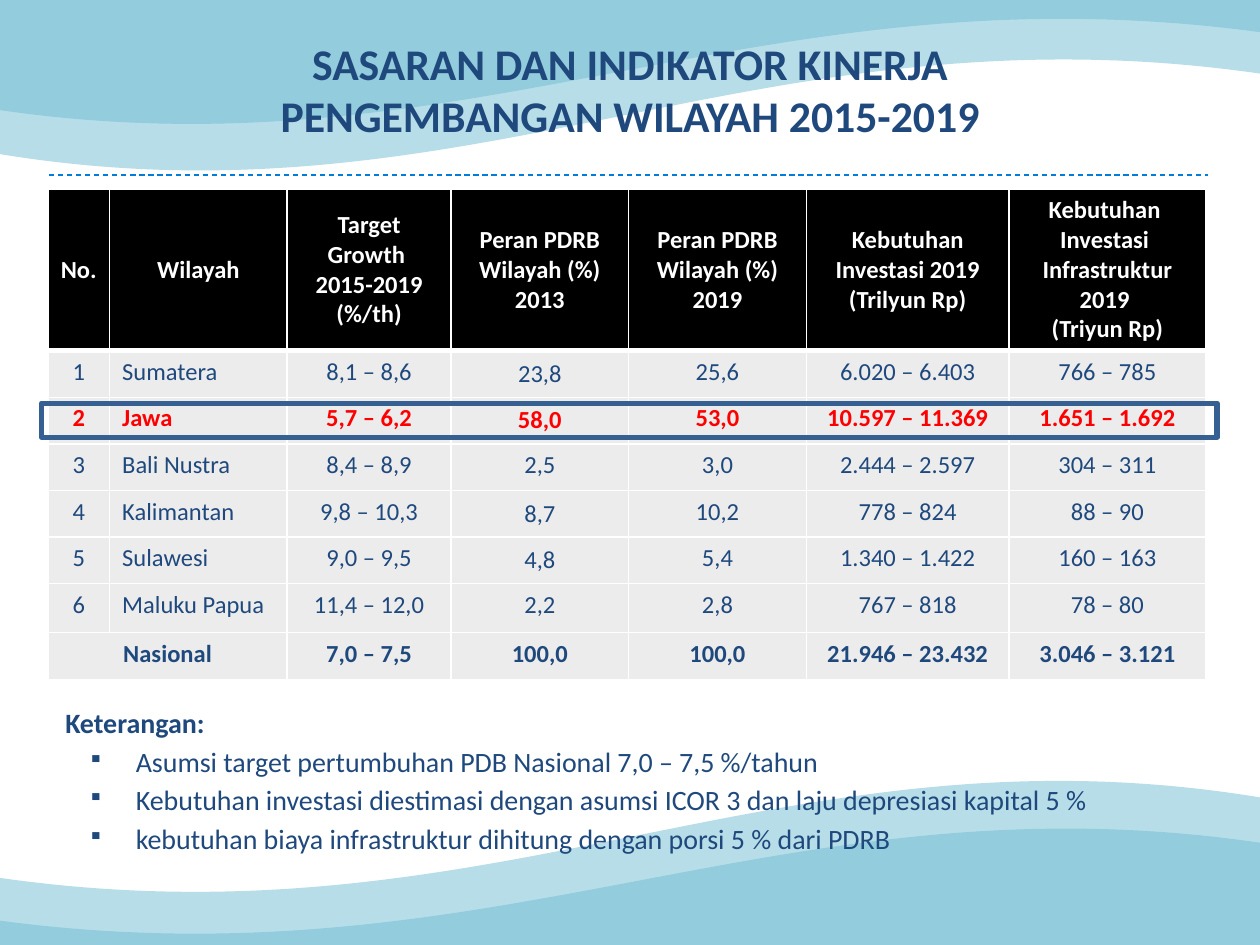
"""Builds the slide on regional development targets and indicators 2015-2019."""
from dataclasses import dataclass

from lxml import etree
from pptx import Presentation
from pptx.dml.color import RGBColor
from pptx.enum.dml import MSO_LINE
from pptx.enum.shapes import MSO_CONNECTOR, MSO_SHAPE
from pptx.enum.text import MSO_ANCHOR, MSO_AUTO_SIZE, PP_ALIGN
from pptx.oxml.ns import qn
from pptx.util import Inches, Pt

CENTER, LEFT = PP_ALIGN.CENTER, PP_ALIGN.LEFT
TOP, MIDDLE = MSO_ANCHOR.TOP, MSO_ANCHOR.MIDDLE
DASH, STRAIGHT = MSO_LINE.DASH, MSO_CONNECTOR.STRAIGHT
RECTANGLE, NO_AUTOFIT = MSO_SHAPE.RECTANGLE, MSO_AUTO_SIZE.NONE
FONT, NAVY, WHITE, RED = "Calibri", "1F497D", "FFFFFF", "FF0000"
BLACK, GREY, PALE, AQUA = "000000", "ECECEC", "B7DEE8", "93CDDD"
TITLE_ONLY = 5


@dataclass(frozen=True)
class Wave:
    """A band drawn at the top and, turned round, at the bottom."""
    fill: str
    size: tuple[float, float]
    top_corner: tuple[float, float]
    bottom_corner: tuple[float, float]
    edges: tuple[tuple[tuple[float, float], ...], ...]


@dataclass(frozen=True)
class CellStyle:
    """The look of one table cell."""
    fill: str = GREY
    color: str = NAVY
    bold: bool = False
    align: PP_ALIGN = CENTER
    anchor: MSO_ANCHOR = TOP
    margins: tuple[float, float] = (0.1, 0.05)
    top_border: float = 1
    bottom_border: float = 1


WAVES = (
    Wave(PALE, (10.08, 1.38), (-0.04, -0.03), (-0.05, 6.2), (
        ((3.62, 0),), ((6.13, 0), (9.04, 0.01), (10.08, 0.03)), ((10.08, 0.62),),
        ((6.07, 0.03), (3.82, 1.88), (0.02, 1.25)), ((0, 0.02),),
        ((0.69, 0.01), (2.08, 0), (3.62, 0)))),
    Wave(AQUA, (10.06, 1.04), (-0.03, -0.05), (-0.05, 6.57), (
        ((1.58, 0),), ((10.03, 0.04),), ((10.03, 0.11), (10.06, 0.24), (10.06, 0.31)),
        ((6.05, -0.24), (3.8, 1.48), (0, 0.92)), ((0, 0.04),), ((1.58, 0),))),
)
TITLE = ("SASARAN DAN INDIKATOR KINERJA", "PENGEMBANGAN WILAYAH 2015-2019")
COLUMN_WIDTHS = (0.49, 1.41, 1.3, 1.41, 1.41, 1.61, 1.56)
ROW_HEIGHTS = (1.15, 0.37, 0.37, 0.37, 0.37, 0.37, 0.39, 0.37)
ROWS = (
    ("No.", "Wilayah", "Target Growth \n2015-2019 (%/th)", "Peran PDRB Wilayah (%)\n2013",
     "Peran PDRB Wilayah (%)\n2019", "Kebutuhan Investasi 2019\n(Trilyun Rp)",
     "Kebutuhan \nInvestasi \nInfrastruktur 2019 \n(Triyun Rp)"),
    ("1", "Sumatera", "8,1 – 8,6", "23,8", "25,6", "6.020 – 6.403", "766 – 785"),
    ("2", "Jawa", "5,7 – 6,2", "58,0", "53,0", "10.597 – 11.369", "1.651 – 1.692"),
    ("3", "Bali Nustra", "8,4 – 8,9", "2,5", "3,0", "2.444 – 2.597", "304 – 311"),
    ("4", "Kalimantan", "9,8 – 10,3", "8,7", "10,2", "778 – 824", "88 – 90"),
    ("5", "Sulawesi", "9,0 – 9,5", "4,8", "5,4", "1.340 – 1.422", "160 – 163"),
    ("6", "Maluku Papua", "11,4 – 12,0", "2,2", "2,8", "767 – 818", "78 – 80"),
    ("Nasional", "", "7,0 – 7,5", "100,0", "100,0", "21.946 – 23.432", "3.046 – 3.121"),
)
JAVA_ROW, NATIONAL_ROW = 2, 7
REGION_COLUMN, SHARE_2013_COLUMN = 1, 3
CENTRED_SHARE_ROWS = (1, 2, 4, 5)
NOTES = (
    "Asumsi target pertumbuhan PDB Nasional 7,0 – 7,5 %/tahun",
    "Kebutuhan investasi diestimasi dengan asumsi ICOR 3 dan laju depresiasi kapital 5 %",
    "kebutuhan biaya infrastruktur dihitung dengan porsi 5 % dari PDRB",
)


def rgb(value: str) -> RGBColor:
    """Turn a hex string into a colour."""
    return RGBColor.from_string(value)


def add_run(paragraph, text: str, size: float, color: str, bold: bool) -> None:
    """Append one formatted run."""
    run = paragraph.add_run()
    run.text = text
    run.font.name, run.font.size, run.font.bold = FONT, Pt(size), bold
    run.font.color.rgb = rgb(color)


def add_lines(frame, lines, size: float, color: str, bold: bool, align: PP_ALIGN) -> None:
    """Write each line as a paragraph of an empty text frame."""
    for index, line in enumerate(lines):
        paragraph = frame.add_paragraph() if index else frame.paragraphs[0]
        paragraph.alignment = align
        add_run(paragraph, line, size, color, bold)


def draw_wave(shapes, wave: Wave, corner: tuple[float, float], rotation: float) -> None:
    """Draw one band with true curves inside its frame."""
    builder = shapes.build_freeform(0, 0, scale=1.0)
    builder.add_line_segments([tuple(Inches(length) for length in wave.size)])
    band = builder.convert_to_shape(Inches(corner[0]), Inches(corner[1]))
    outline = next(band.element.iter(qn("a:path")))
    for child in list(outline):
        outline.remove(child)
    for index, edge in enumerate(wave.edges):
        tag = "a:moveTo" if index == 0 else "a:cubicBezTo" if len(edge) == 3 else "a:lnTo"
        segment = etree.SubElement(outline, qn(tag))
        for x, y in edge:
            etree.SubElement(segment, qn("a:pt"), x=str(Inches(x)), y=str(Inches(y)))
    etree.SubElement(outline, qn("a:close"))
    band.rotation, band.shadow.inherit = rotation, False
    band.fill.solid()
    band.fill.fore_color.rgb = rgb(wave.fill)
    band.line.fill.background()


def cell_style(row: int, column: int) -> CellStyle:
    """Choose the look of a cell from its place in the table."""
    if row == 0:
        return CellStyle(BLACK, WHITE, True, anchor=MIDDLE, bottom_border=3)
    centred = column == SHARE_2013_COLUMN and row in CENTRED_SHARE_ROWS
    return CellStyle(
        color=RED if row == JAVA_ROW else NAVY,
        bold=row in (JAVA_ROW, NATIONAL_ROW),
        align=LEFT if column == REGION_COLUMN else CENTER,
        anchor=MIDDLE if centred else TOP,
        margins=(0.07, 0) if centred else (0.1, 0.05),
        top_border=3 if row == 1 else 1)


def format_cell(cell, text: str, style: CellStyle) -> None:
    """Fill in one cell with its text, borders and background."""
    properties = cell._tc.get_or_add_tcPr()
    borders = {"lnL": 1, "lnR": 1, "lnT": style.top_border, "lnB": style.bottom_border}
    for side, width in borders.items():
        border = etree.SubElement(properties, qn(f"a:{side}"), w=str(Pt(width)))
        fill = etree.SubElement(border, qn("a:solidFill"))
        etree.SubElement(fill, qn("a:srgbClr"), val=WHITE)
    cell.fill.solid()
    cell.fill.fore_color.rgb = rgb(style.fill)
    cell.margin_left = cell.margin_right = Inches(style.margins[0])
    cell.margin_top = cell.margin_bottom = Inches(style.margins[1])
    cell.vertical_anchor = style.anchor
    if text:
        add_lines(cell.text_frame, text.split("\n"), 14, style.color, style.bold, style.align)


def draw_table(shapes) -> None:
    """Draw the table of regional targets."""
    targets = shapes.add_table(len(ROWS), len(COLUMN_WIDTHS), Inches(0.38), Inches(1.5),
                               Inches(sum(COLUMN_WIDTHS)), Inches(sum(ROW_HEIGHTS))).table
    targets.horz_banding = False
    for column, width in zip(targets.columns, COLUMN_WIDTHS):
        column.width = Inches(width)
    for row, height in zip(targets.rows, ROW_HEIGHTS):
        row.height = Inches(height)
    targets.cell(NATIONAL_ROW, 0).merge(targets.cell(NATIONAL_ROW, 1))
    for r, texts in enumerate(ROWS):
        for c, text in enumerate(texts):
            format_cell(targets.cell(r, c), text, cell_style(r, c))


def draw_notes(shapes) -> None:
    """Draw the explanatory notes below the table."""
    notes = shapes.add_textbox(Inches(0.42), Inches(5.35), Inches(9.17), Inches(1.65)).text_frame
    notes.word_wrap, notes.vertical_anchor = True, MIDDLE
    add_lines(notes, ("Keterangan:", *NOTES), 16, NAVY, False, LEFT)
    notes.paragraphs[0].runs[0].font.bold = True
    for index, paragraph in enumerate(notes.paragraphs):
        paragraph.line_spacing = Pt(22)
        if index:
            properties = paragraph._p.get_or_add_pPr()
            properties.set("marL", str(Inches(0.56)))
            properties.set("indent", str(Inches(-0.38)))
            color = etree.SubElement(properties, qn("a:buClr"))
            etree.SubElement(color, qn("a:srgbClr"), val=NAVY)
            etree.SubElement(properties, qn("a:buSzPct"), val="77000")
            etree.SubElement(properties, qn("a:buChar"), char="▪")


def main() -> None:
    """Build and save the slide."""
    deck = Presentation()
    deck.slide_width, deck.slide_height = Inches(10), Inches(7.5)
    shapes = deck.slides.add_slide(deck.slide_layouts[TITLE_ONLY]).shapes
    for wave in WAVES:
        draw_wave(shapes, wave, wave.bottom_corner, 180)
        draw_wave(shapes, wave, wave.top_corner, 0)
    divider = shapes.add_connector(STRAIGHT, Inches(0.39), Inches(1.39), Inches(9.59), Inches(1.39))
    divider.line.color.rgb = rgb("007DDA")
    divider.line.width, divider.line.dash_style = Pt(0.75), DASH
    etree.SubElement(divider.element.spPr, qn("a:effectLst"))
    title = shapes.title
    title.element.getparent().append(title.element)
    title.left, title.top, title.width, title.height = 0, Inches(0.24), Inches(10), Inches(1.25)
    title.text_frame.auto_size, title.text_frame.vertical_anchor = NO_AUTOFIT, TOP
    add_lines(title.text_frame, TITLE, 25, NAVY, True, CENTER)
    draw_table(shapes)
    draw_notes(shapes)
    highlight = shapes.add_shape(RECTANGLE, Inches(0.33), Inches(3.2), Inches(9.33), Inches(0.27))
    highlight.shadow.inherit = False
    highlight.fill.background()
    highlight.line.color.rgb, highlight.line.width = rgb("376092"), Pt(3)
    deck.save("out.pptx")


if __name__ == "__main__":
    main()
